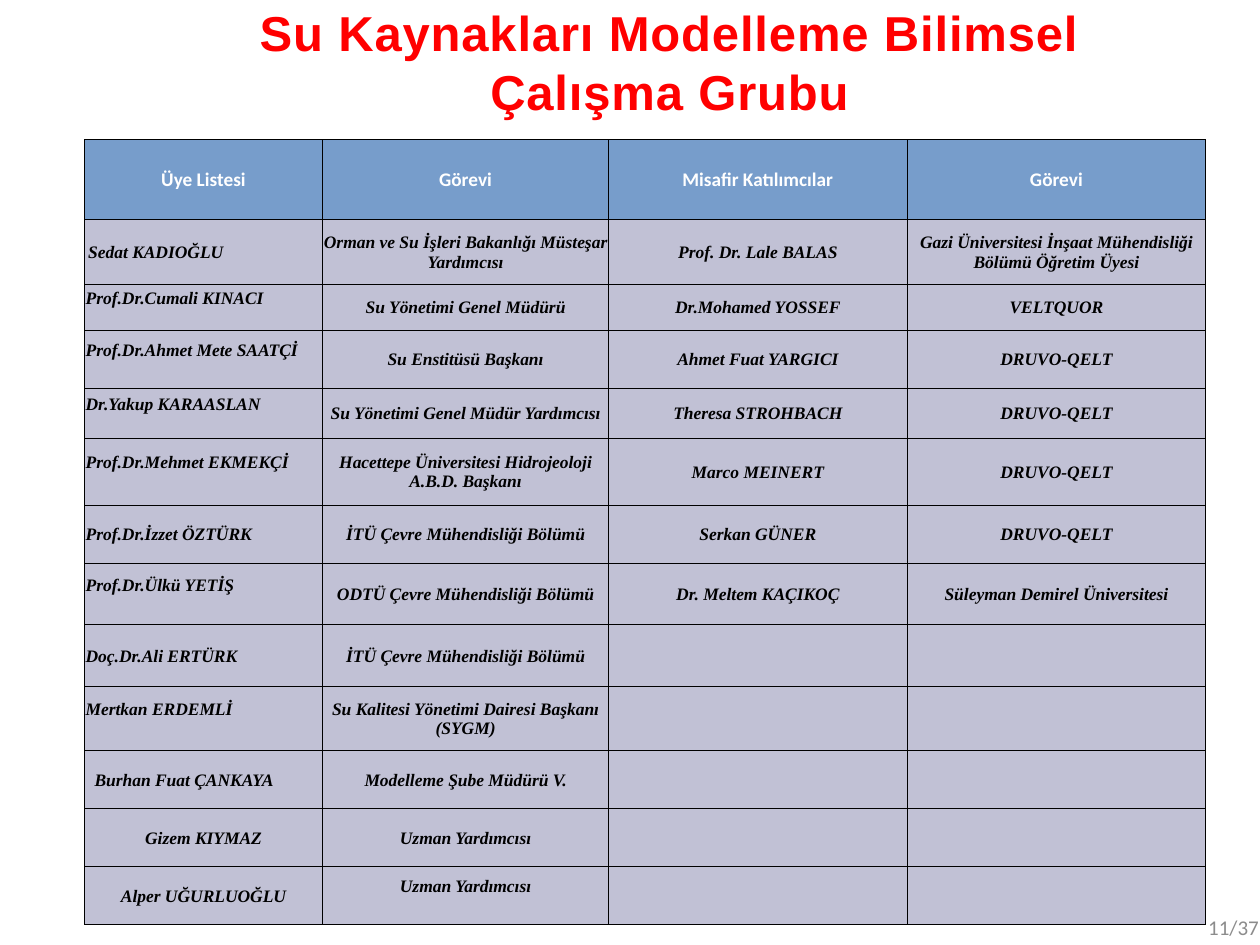
from dataclasses import dataclass

from lxml import etree
from pptx import Presentation
from pptx.dml.color import RGBColor
from pptx.enum.text import MSO_ANCHOR, PP_ALIGN
from pptx.oxml.ns import qn
from pptx.util import Inches, Pt

LEFT, CENTER, RIGHT = PP_ALIGN.LEFT, PP_ALIGN.CENTER, PP_ALIGN.RIGHT
MIDDLE = MSO_ANCHOR.MIDDLE


@dataclass(frozen=True)
class Style:
    font: str
    size: float
    color: str
    bold: bool = False
    italic: bool = False


@dataclass(frozen=True)
class Theme:
    title: Style = Style("Arial", 28, "FF0000", bold=True)
    header: Style = Style("Calibri", 11, "FFFFFF", bold=True)
    body: Style = Style("Times New Roman", 10, "000000", bold=True, italic=True)
    page: Style = Style("Calibri", 12, "8C8C8C")
    header_fill: str = "779DCB"
    body_fill: str = "C1C1D5"
    border: str = "000000"
    border_width: float = 0.5
    title_spacing: float = 0.5


THEME = Theme()

# Column widths and row heights in inches
COLS = [1.89, 2.27, 2.37, 2.37]
ROWS = [0.63, 0.52, 0.36, 0.46, 0.4, 0.53, 0.46, 0.49, 0.49, 0.51] + [0.46] * 3

HEADER = ["Üye Listesi", "Görevi", "Misafir Katılımcılar", "Görevi"]
MEMBERS = [
    ("Sedat KADIOĞLU", "Orman ve Su İşleri Bakanlığı Müsteşar Yardımcısı"),
    ("Prof.Dr.Cumali KINACI", "Su Yönetimi Genel Müdürü"),
    ("Prof.Dr.Ahmet Mete SAATÇİ", "Su Enstitüsü Başkanı"),
    ("Dr.Yakup KARAASLAN", "Su Yönetimi Genel Müdür Yardımcısı"),
    ("Prof.Dr.Mehmet EKMEKÇİ", "Hacettepe Üniversitesi Hidrojeoloji A.B.D. Başkanı"),
    ("Prof.Dr.İzzet ÖZTÜRK", "İTÜ Çevre Mühendisliği Bölümü"),
    ("Prof.Dr.Ülkü YETİŞ", "ODTÜ Çevre Mühendisliği Bölümü"),
    ("Doç.Dr.Ali ERTÜRK", "İTÜ Çevre Mühendisliği Bölümü"),
    ("Mertkan ERDEMLİ", "Su Kalitesi Yönetimi Dairesi Başkanı (SYGM)"),
    ("Burhan Fuat ÇANKAYA", "Modelleme Şube Müdürü V."),
    ("Gizem KIYMAZ", "Uzman Yardımcısı"),
    ("Alper UĞURLUOĞLU", "Uzman Yardımcısı"),
]
GUESTS = [
    ("Prof. Dr. Lale BALAS", "Gazi Üniversitesi İnşaat Mühendisliği Bölümü Öğretim Üyesi"),
    ("Dr.Mohamed YOSSEF", "VELTQUOR"),
    ("Ahmet Fuat YARGICI", "DRUVO-QELT"),
    ("Theresa STROHBACH", "DRUVO-QELT"),
    ("Marco MEINERT", "DRUVO-QELT"),
    ("Serkan GÜNER", "DRUVO-QELT"),
    ("Dr. Meltem KAÇIKOÇ", "Süleyman Demirel Üniversitesi"),
]
LEFT_NAMES = range(1, 11)  # rows whose member name is left-aligned
INDENTS = {1: 0.03, 10: 0.08}
RAISED = {(r, 0) for r in (2, 3, 4, 5, 7, 9)} | {(12, 1)}  # text above the middle
INSET, LIFT = 0.01, 0.15


def write(tf, text, style, align):
    p = tf.paragraphs[0]
    p.alignment = align
    if text:
        p.add_run().text = text
    font = p.font
    font.name, font.size = style.font, Pt(style.size)
    font.bold, font.italic = style.bold, style.italic
    font.color.rgb = RGBColor.from_string(style.color)


def add_text(s, box, text, style, align):
    tf = s.shapes.add_textbox(*box).text_frame
    tf.word_wrap = True
    tf.vertical_anchor = MIDDLE
    write(tf, text, style, align)
    return tf


def add_borders(cell):
    tc_pr = cell._tc.get_or_add_tcPr()
    for i, side in enumerate(("a:lnL", "a:lnR", "a:lnT", "a:lnB")):
        ln = etree.Element(qn(side), w=str(Pt(THEME.border_width)))
        fill = etree.SubElement(ln, qn("a:solidFill"))
        etree.SubElement(fill, qn("a:srgbClr"), val=THEME.border)
        tc_pr.insert(i, ln)


def title(s, box):
    tf = add_text(s, box, "Su Kaynakları Modelleme Bilimsel Çalışma Grubu",
                  THEME.title, CENTER)
    tf.margin_bottom = int(box[3] * 0.6)  # lifts the text towards the top edge
    r = tf.paragraphs[0].runs[0]
    r.font._element.set("spc", str(int(THEME.title_spacing * 100)))


def member_table(s, box):
    table = s.shapes.add_table(len(ROWS), len(COLS), *box).table
    table.first_row = table.horz_banding = False
    for col, width in zip(table.columns, COLS):
        col.width = int(box[2] * width / sum(COLS))
    for row, height in zip(table.rows, ROWS):
        row.height = int(box[3] * height / sum(ROWS))

    guests = GUESTS + [("", "")] * (len(MEMBERS) - len(GUESTS))
    data = [HEADER] + [m + g for m, g in zip(MEMBERS, guests)]
    for i, texts in enumerate(data):
        style = THEME.body if i else THEME.header
        fill = THEME.body_fill if i else THEME.header_fill
        for j, text in enumerate(texts):
            cell = table.cell(i, j)
            named = j == 0 and i in LEFT_NAMES
            cell.vertical_anchor = MIDDLE
            cell.margin_left = Inches(INDENTS.get(i, INSET) if named else 0)
            cell.margin_right = 0
            cell.margin_top = Inches(INSET)
            cell.margin_bottom = Inches(LIFT if (i, j) in RAISED else 0)
            cell.fill.solid()
            cell.fill.fore_color.rgb = RGBColor.from_string(fill)
            add_borders(cell)
            write(cell.text_frame, text, style, LEFT if named else CENTER)


def page_number(s, box):
    add_text(s, box, "11/37", THEME.page, RIGHT)


def main():
    prs = Presentation()
    prs.slide_width, prs.slide_height = Inches(10), Inches(7.5)
    s = prs.slides.add_slide(prs.slide_layouts[6])

    def box(*inches):
        return [Inches(v) for v in inches]

    member_table(s, box(0.67, 1.11, sum(COLS), sum(ROWS)))
    title(s, box(1.3, 0.29, 8.03, 0.87))
    page_number(s, box(7.76, 7.22, 2.33, 0.28))
    prs.save("out.pptx")


if __name__ == "__main__":
    main()
